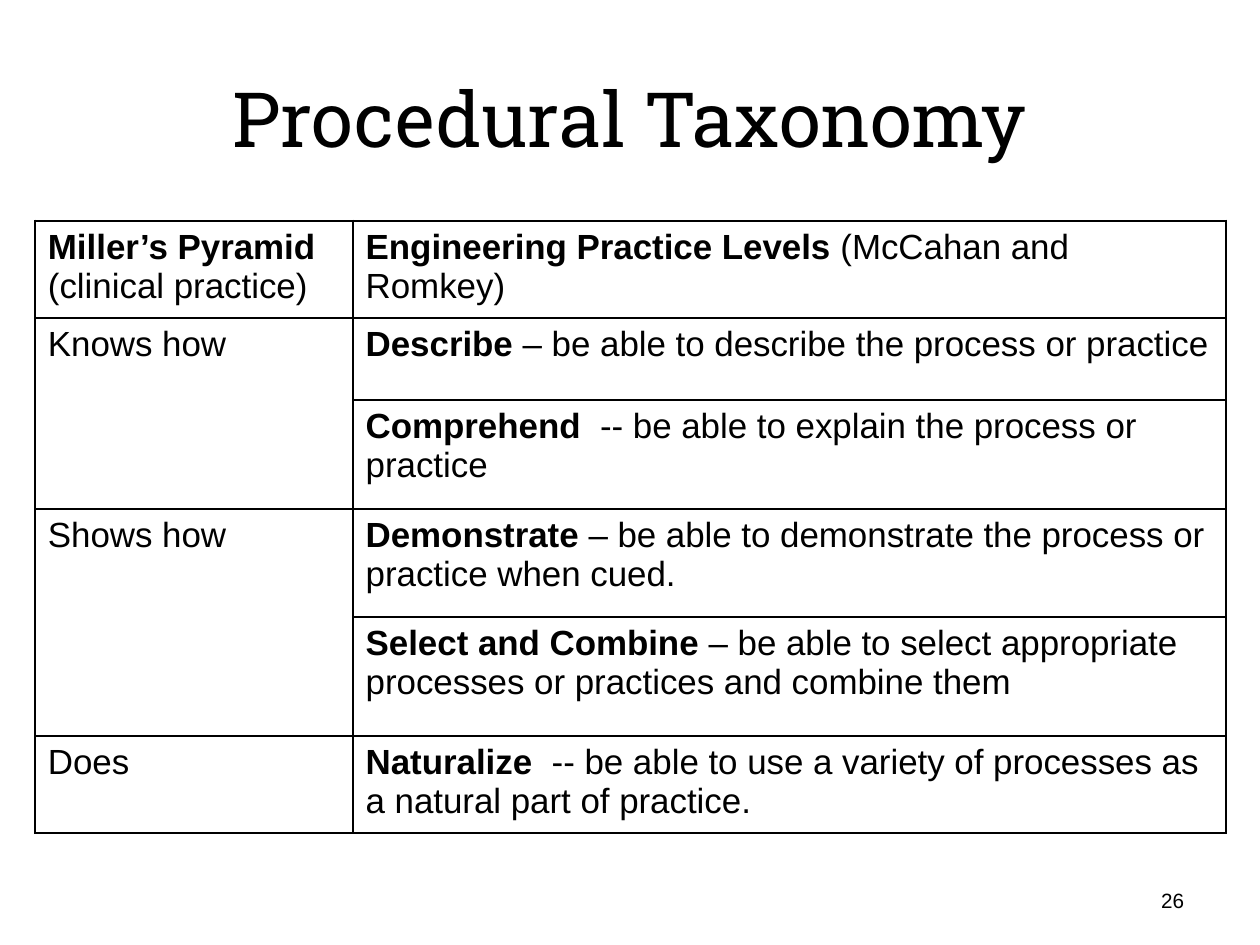
from lxml import etree
from pptx import Presentation
from pptx.dml.color import RGBColor
from pptx.enum.text import MSO_ANCHOR, MSO_AUTO_SIZE, PP_ALIGN
from pptx.oxml.ns import qn
from pptx.util import Cm, Inches, Pt

MIDDLE = MSO_ANCHOR.MIDDLE
TOP = MSO_ANCHOR.TOP
CENTER = PP_ALIGN.CENTER
LEFT = PP_ALIGN.LEFT
RIGHT = PP_ALIGN.RIGHT
NO_AUTOFIT = MSO_AUTO_SIZE.NONE

BLACK = RGBColor(0x00, 0x00, 0x00)
WHITE = RGBColor(0xFF, 0xFF, 0xFF)
TITLE_FONT = "Roboto Slab"
BODY_FONT = "Arial"
TITLE_LAYOUT = 5
BORDER_POINTS = 1.5
BORDER_SIDES = ("lnL", "lnR", "lnT", "lnB")

TITLE_BOX = (0.55, 0.33, 9.92, 1.38)
TABLE_BOX = (0.31, 1.93, 10.42, 5.36)
NUMBER_BOX = (7.9, 7.66, 2.57, 0.44)
COLUMN_WIDTHS = (2.78, 7.64)
ROW_HEIGHTS = (0.85, 0.72, 0.95, 0.95, 1.04, 0.85)

# Each entry is a list of paragraphs, each paragraph a list of (text, bold) runs.
MILLER_HEADING = [[("Miller’s Pyramid", True)], [("(clinical practice)", False)]]
# Each stage: first row, last row, name.
MILLER_STAGES = [(1, 2, "Knows how"), (3, 4, "Shows how"), (5, 5, "Does")]
PRACTICE_LEVELS = [
    ("Engineering Practice Levels", " (McCahan and Romkey)"),
    ("Describe", " – be able to describe the process or practice"),
    ("Comprehend", "  -- be able to explain the process or practice"),
    ("Demonstrate", " – be able to demonstrate the process or practice when cued."),
    ("Select and Combine",
     " – be able to select appropriate processes or practices and combine them"),
    ("Naturalize",
     "  -- be able to use a variety of processes as a natural part of practice. "),
]


def add_run(paragraph, text, font_name, size, bold=False):
    run = paragraph.add_run()
    run.text = text
    run.font.name = font_name
    run.font.size = Pt(size)
    run.font.bold = bold
    run.font.color.rgb = BLACK


def set_margins(holder):
    """Apply the shared insets to a text frame or a table cell."""
    holder.margin_left = holder.margin_right = Inches(0.11)
    holder.margin_top = holder.margin_bottom = Inches(0.06)


def write_line(shape, text, font_name, size, alignment):
    """Write one middle-anchored line into a text shape."""
    frame = shape.text_frame
    frame.word_wrap = True
    frame.auto_size = NO_AUTOFIT
    frame.vertical_anchor = MIDDLE
    set_margins(frame)
    paragraph = frame.paragraphs[0]
    paragraph.alignment = alignment
    add_run(paragraph, text, font_name, size)


def place_title(slide, box):
    title = slide.shapes.title
    title.left, title.top, title.width, title.height = map(Inches, box)
    write_line(title, "Procedural Taxonomy", TITLE_FONT, 48, CENTER)


def add_slide_number(slide, box):
    number = slide.shapes.add_textbox(*map(Inches, box))
    write_line(number, "26", BODY_FONT, 13, RIGHT)


def style_cell(cell, open_side=None):
    """Give a cell a white fill and black borders, except on its open side."""
    properties = cell._tc.get_or_add_tcPr()
    for side in BORDER_SIDES:
        line = etree.SubElement(properties, qn(f"a:{side}"), w=str(Pt(BORDER_POINTS)))
        if side == open_side:
            etree.SubElement(line, qn("a:noFill"))
        else:
            fill = etree.SubElement(line, qn("a:solidFill"))
            etree.SubElement(fill, qn("a:srgbClr"), val=str(BLACK))
    cell.fill.solid()
    cell.fill.fore_color.rgb = WHITE
    cell.vertical_anchor = TOP
    set_margins(cell)


def write_cell(cell, paragraphs):
    frame = cell.text_frame
    for index, runs in enumerate(paragraphs):
        paragraph = frame.add_paragraph() if index else frame.paragraphs[0]
        paragraph.alignment = LEFT
        for text, bold in runs:
            add_run(paragraph, text, BODY_FONT, 22, bold)


def add_taxonomy_table(slide, box):
    frame = slide.shapes.add_table(
        len(ROW_HEIGHTS), len(COLUMN_WIDTHS), *map(Inches, box))
    table = frame.table
    table.first_row = False
    table.horz_banding = False
    for column, width in zip(table.columns, COLUMN_WIDTHS):
        column.width = Inches(width)
    for row, height in zip(table.rows, ROW_HEIGHTS):
        row.height = Inches(height)

    style_cell(table.cell(0, 0))
    write_cell(table.cell(0, 0), MILLER_HEADING)
    for first, last, name in MILLER_STAGES:
        write_cell(table.cell(first, 0), [[(name, False)]])
        style_cell(table.cell(first, 0), "lnB" if last > first else None)
        if last > first:
            style_cell(table.cell(last, 0), "lnT")
    for row, (level, description) in enumerate(PRACTICE_LEVELS):
        style_cell(table.cell(row, 1))
        write_cell(table.cell(row, 1), [[(level, True), (description, False)]])


def main():
    presentation = Presentation()
    presentation.slide_width = Cm(28)
    presentation.slide_height = Cm(21)
    # The template declares a 4:3 screen preset, which this custom size replaces.
    presentation.element.sldSz.attrib.pop("type", None)
    slide = presentation.slides.add_slide(presentation.slide_layouts[TITLE_LAYOUT])
    place_title(slide, TITLE_BOX)
    add_slide_number(slide, NUMBER_BOX)
    add_taxonomy_table(slide, TABLE_BOX)
    presentation.save("out.pptx")


if __name__ == "__main__":
    main()
